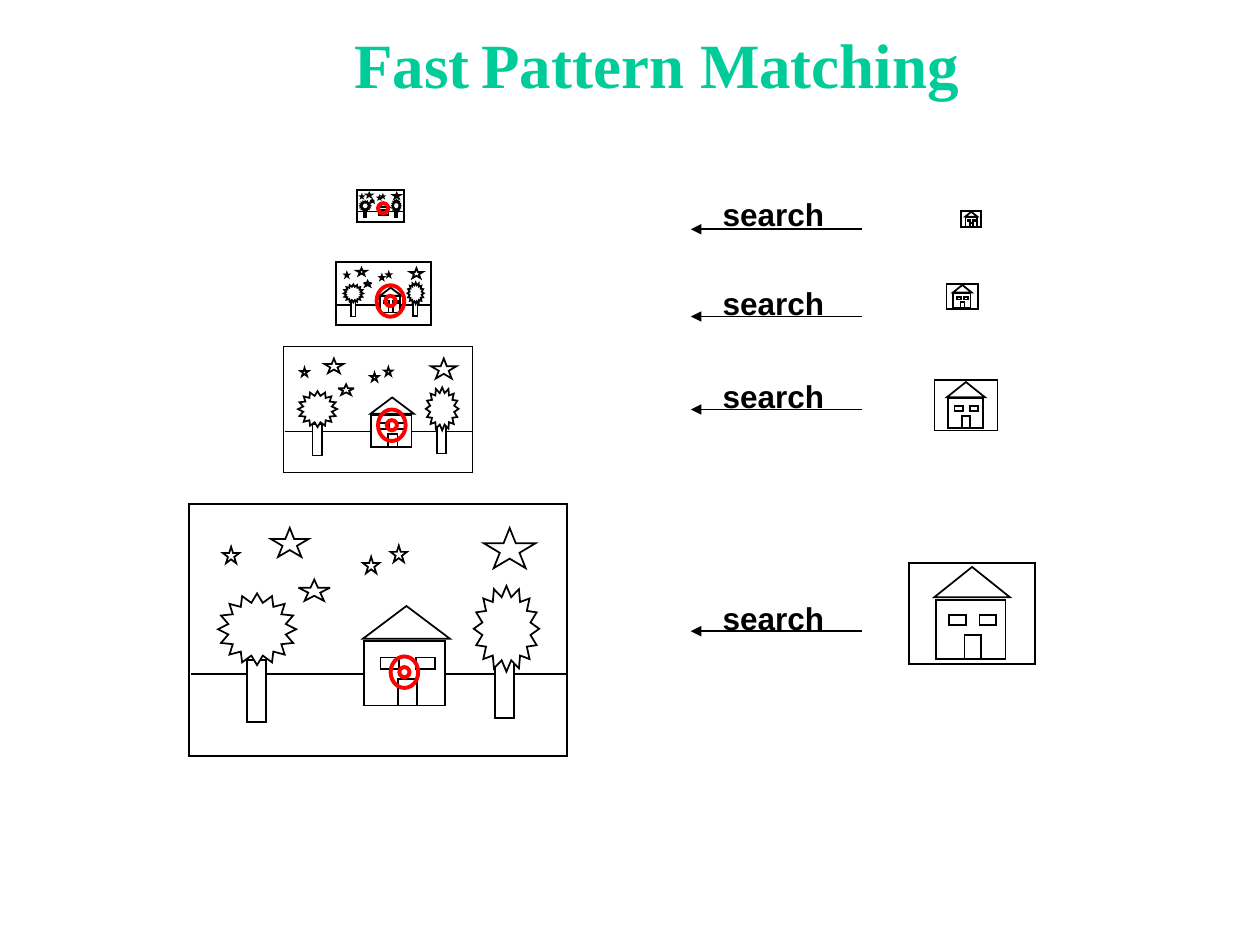
"""Build the Fast Pattern Matching slide with its two image pyramids."""
from lxml import etree
from pptx import Presentation
from pptx.dml.color import RGBColor
from pptx.enum.shapes import MSO_CONNECTOR, MSO_SHAPE
from pptx.enum.text import MSO_ANCHOR, MSO_AUTO_SIZE, PP_ALIGN
from pptx.oxml.ns import qn
from pptx.util import Pt

RECT = MSO_SHAPE.RECTANGLE
ROOF = MSO_SHAPE.ISOSCELES_TRIANGLE
STAR = MSO_SHAPE.STAR_5_POINT
TREE = MSO_SHAPE.STAR_16_POINT
OVAL = MSO_SHAPE.OVAL
LINE = MSO_CONNECTOR.STRAIGHT
BLACK = RGBColor(0, 0, 0)
WHITE = RGBColor(255, 255, 255)
RED = RGBColor(255, 0, 0)
GREEN = RGBColor(0, 204, 153)

SCENE = [
    (RECT, 0, 0, 216, 144, None),
    (RECT, 100.1, 78.5, 46.1, 36.7, WHITE),
    (ROOF, 99.4, 58.3, 49.7, 18.7, None),
    (STAR, 46.8, 13.7, 21.6, 16.6, None),
    (STAR, 115.2, 23.8, 9.4, 9.4, None),
    (STAR, 168.5, 13.7, 29.5, 23, None),
    (RECT, 33.1, 89.3, 10.8, 35.3, WHITE),
    (RECT, 175, 87.1, 10.8, 35.3, WHITE),
    (TREE, 16.6, 51.1, 44.6, 41, WHITE),
    (STAR, 99.4, 30.2, 9.4, 9.4, None),
    (STAR, 19.4, 24.5, 9.4, 9.4, None),
    (STAR, 62.6, 43.2, 18, 12.2, None),
    (RECT, 119.5, 100.1, 10.8, 15.1, None),
    (RECT, 109.4, 87.8, 10.8, 6.5, None),
    (RECT, 129.6, 87.8, 10.8, 6.5, None),
    (TREE, 162.7, 46.8, 37.4, 49, WHITE),
]
HOUSE = [
    (RECT, 0, 0, 72, 57.6, None),
    (RECT, 15.5, 20.9, 39.6, 33.8, None),
    (ROOF, 14.4, 2.2, 43.2, 17.3, None),
    (RECT, 31.7, 41, 9.4, 13.7, None),
    (RECT, 23, 29.5, 9.4, 5.8, None),
    (RECT, 40.3, 29.5, 9.4, 5.8, None),
]
SCENES = [(108, 288, 1), (162, 198, 0.5), (192.2, 149.8, 0.25), (203.8, 108.7, 0.125)]
HOUSES = [(519.5, 321.8, 1), (534, 217.2, 0.5), (540.9, 162.3, 0.25), (549.3, 120.7, 0.16)]
SEARCHES = [(360.7, 339.1), (234, 212.4), (180.9, 159.1), (131, 108)]
MATCHES = [(231.1, 384.1, True), (223.9, 243, True), (223.1, 172, True), (218.9, 119, False)]


def draw(shapes, kind, left, top, width, height, fill, color=BLACK, weight=1):
    shape = shapes.add_shape(kind, Pt(left), Pt(top), Pt(width), Pt(height))
    shape.shadow.inherit = False
    if fill is None:
        shape.fill.background()
    else:
        shape.fill.solid()
        shape.fill.fore_color.rgb = fill
    shape.line.color.rgb = color
    shape.line.width = Pt(weight)
    etree.SubElement(shape._element.spPr.find(qn("a:ln")), qn("a:miter"), lim="800000")


def rule(shapes, start, end, level):
    line = shapes.add_connector(LINE, Pt(start), Pt(level), Pt(end), Pt(level))
    line.line.color.rgb = BLACK
    line.line.width = Pt(1)
    etree.SubElement(line._element.spPr, qn("a:effectLst"))
    return line


deck = Presentation()
deck.slide_width, deck.slide_height = Pt(720), Pt(540)
slide = deck.slides.add_slide(deck.slide_layouts[5])

title = slide.shapes.title
title.left, title.top, title.width, title.height = Pt(130.5), Pt(10.8), Pt(489.6), Pt(50.4)
frame = title.text_frame
frame.auto_size = MSO_AUTO_SIZE.NONE
frame.vertical_anchor = MSO_ANCHOR.TOP
para = frame.paragraphs[0]
para.alignment = PP_ALIGN.CENTER
for text, size, face, color in [
    ("Fast", 36, "Times New Roman", GREEN),
    (" ", 24, "Arial", BLACK),
    ("Pattern Matching", 36, "Times New Roman", GREEN),
]:
    run = para.add_run()
    run.text = text
    run.font.size = Pt(size)
    run.font.name = face
    run.font.bold = True
    run.font.color.rgb = color

for parts, places in [(HOUSE, HOUSES), (SCENE, SCENES)]:
    for left, top, scale in places:
        group = slide.shapes.add_group_shape()
        if parts is SCENE:
            rule(group.shapes, left + 1.4 * scale, left + 216 * scale, top + 97.2 * scale)
        for kind, x, y, width, height, fill in parts:
            draw(group.shapes, kind, left + x * scale, top + y * scale,
                 width * scale, height * scale, fill)

for level, top in SEARCHES:
    arrow = rule(slide.shapes, 492.3, 394.8, level)
    etree.SubElement(arrow._element.spPr.find(qn("a:ln")), qn("a:tailEnd"), type="triangle")
    label = slide.shapes.add_textbox(Pt(405.8), Pt(top - 0.3), Pt(74), Pt(28.8))
    frame = label.text_frame
    frame.word_wrap = False
    frame.auto_size = MSO_AUTO_SIZE.SHAPE_TO_FIT_TEXT
    frame.text = "search"
    font = frame.paragraphs[0].runs[0].font
    font.name = "Arial"
    font.size = Pt(18)
    font.bold = True
    font.color.rgb = BLACK

for x, y, ringed in MATCHES:
    if ringed:
        draw(slide.shapes, OVAL, x - 7.9, y - 9, 15.8, 18, None, RED, 2.25)
    draw(slide.shapes, OVAL, x - 2.9, y - 2.9, 5.8, 5.8, None, RED, 2.25)

deck.save("out.pptx")
